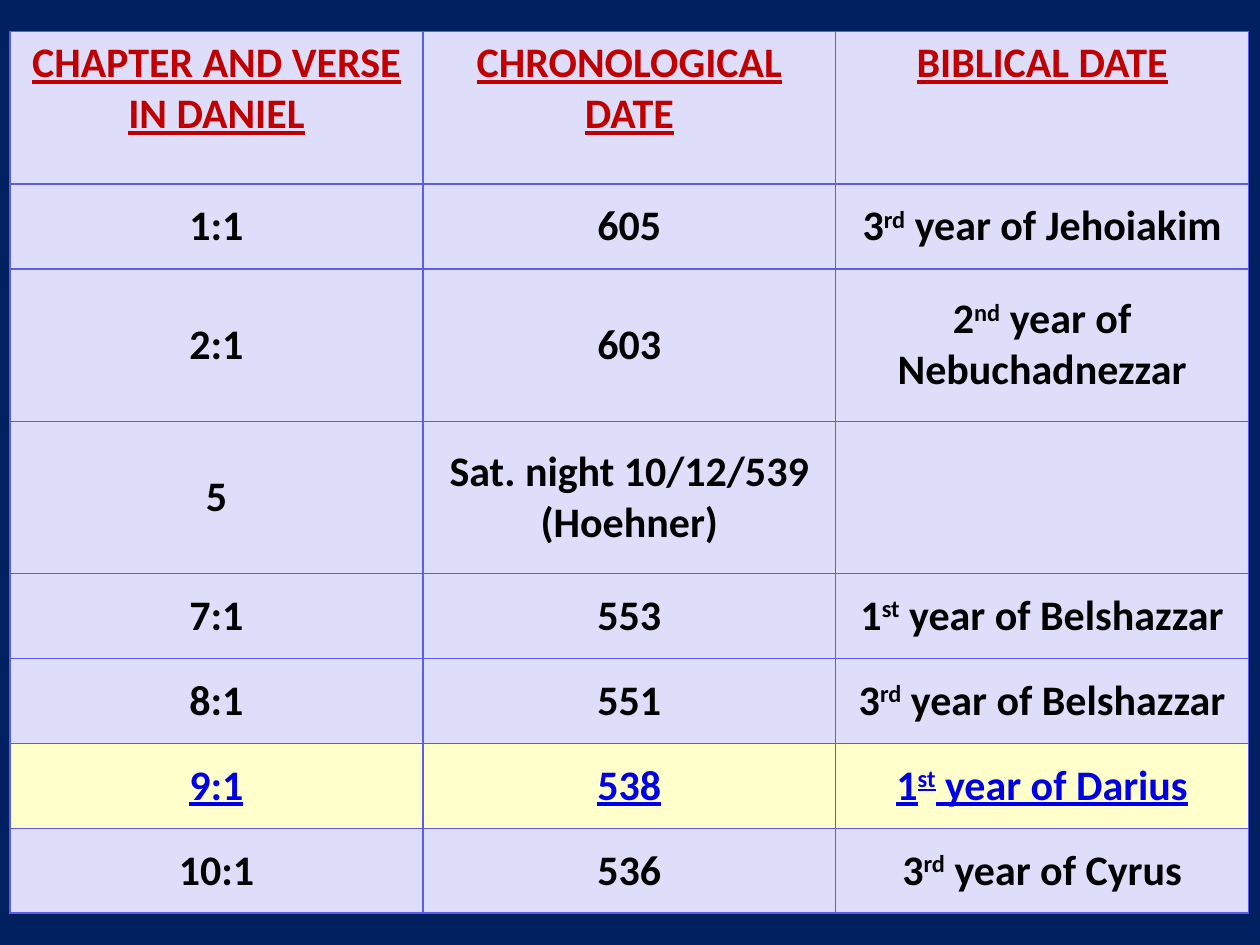
import pptx
import pptx.dml.color
import pptx.enum.text
import pptx.oxml
import pptx.oxml.ns
import pptx.util

Inches = pptx.util.Inches
Pt = pptx.util.Pt

HEAD = ["CHAPTER AND VERSE IN DANIEL", "CHRONOLOGICAL DATE", "BIBLICAL DATE"]
# Carets enclose raised letters
DATES = [
    ["1:1", "605", "3^rd^ year of Jehoiakim"],
    ["2:1", "603", "2^nd^ year of Nebuchadnezzar"],
    ["5", "Sat. night 10/12/539 (Hoehner)", ""],
    ["7:1", "553", "1^st^ year of Belshazzar"],
    ["8:1", "551", "3^rd^ year of Belshazzar"],
    ["9:1", "538", "1^st^ year of Darius"],
    ["10:1", "536", "3^rd^ year of Cyrus"],
]
TALL = {0, 2, 3}
KEY = 6


def color(text):
    return pptx.dml.color.RGBColor.from_string(text)


class Deck:
    font = "Calibri"
    size = Pt(24)
    navy, lilac, cream = "002060", "DEDEFA", "FFFFCC"
    red, black, blue = "C00000", "000000", "0000E5"
    edge = "5C5CE7"

    def __init__(self):
        self.file = pptx.Presentation()
        self.file.slide_width = Inches(10)
        self.file.slide_height = Inches(7.5)
        self.slide = self.file.slides.add_slide(self.file.slide_layouts[6])
        fill = self.slide.background.fill
        fill.solid()
        fill.fore_color.rgb = color(self.navy)

    def table(self, rows, left, top, width, height):
        grid = self.slide.shapes.add_table(
            len(rows), len(rows[0]), left, top, width, height).table
        # Tall rows hold two lines; the others share what is left
        tall = Inches(1.21)
        short = (height - tall * len(TALL)) // (len(rows) - len(TALL))
        for i, row in enumerate(grid.rows):
            row.height = tall if i in TALL else short
        for i, texts in enumerate(rows):
            for j, text in enumerate(texts):
                self.cell(grid.cell(i, j), text, i)
        return grid

    def cell(self, cell, text, row):
        ink = {0: self.red, KEY: self.blue}.get(row, self.black)
        self.border(cell)
        cell.fill.solid()
        cell.fill.fore_color.rgb = color(self.cream if row == KEY else self.lilac)
        anchor = pptx.enum.text.MSO_ANCHOR
        cell.vertical_anchor = anchor.MIDDLE if row else anchor.TOP
        para = cell.text_frame.paragraphs[0]
        para.alignment = pptx.enum.text.PP_ALIGN.CENTER
        para.font.size = self.size
        for k, part in enumerate(text.split("^") if text else []):
            run = para.add_run()
            run.text = part
            font = run.font
            font.name, font.size, font.bold = self.font, self.size, True
            font.underline = row in (0, KEY)
            font.color.rgb = color(ink)
            if k % 2:
                run._r.get_or_add_rPr().set("baseline", "30000")

    def border(self, cell):
        space = pptx.oxml.ns.nsdecls("a")
        for side in "LRTB":
            cell._tc.get_or_add_tcPr().append(pptx.oxml.parse_xml(
                f'<a:ln{side} {space} w="{Pt(1)}"><a:solidFill>'
                f'<a:srgbClr val="{self.edge}"/></a:solidFill></a:ln{side}>'))


def main():
    deck = Deck()
    # Table of dates
    deck.table([HEAD] + DATES, Inches(0.08), Inches(0.25), Inches(9.83), Inches(7))
    deck.file.save("out.pptx")


if __name__ == "__main__":
    main()
